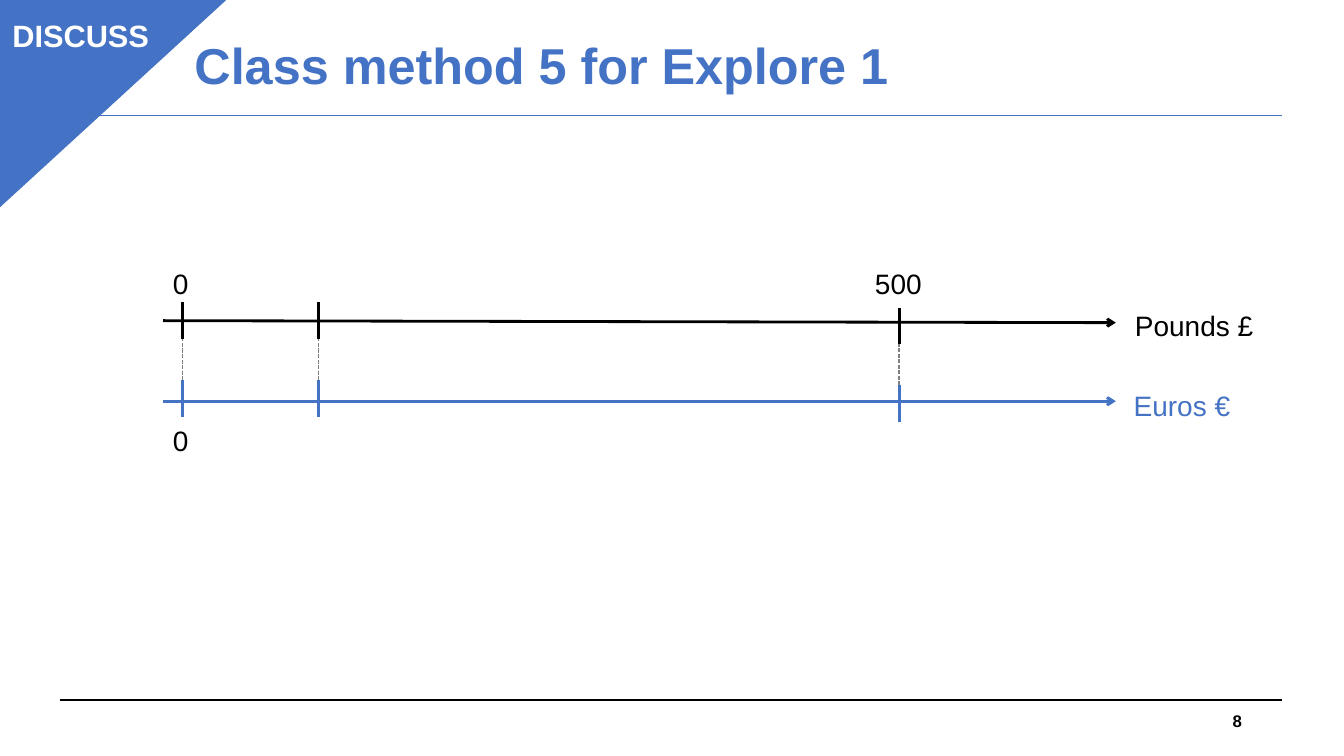
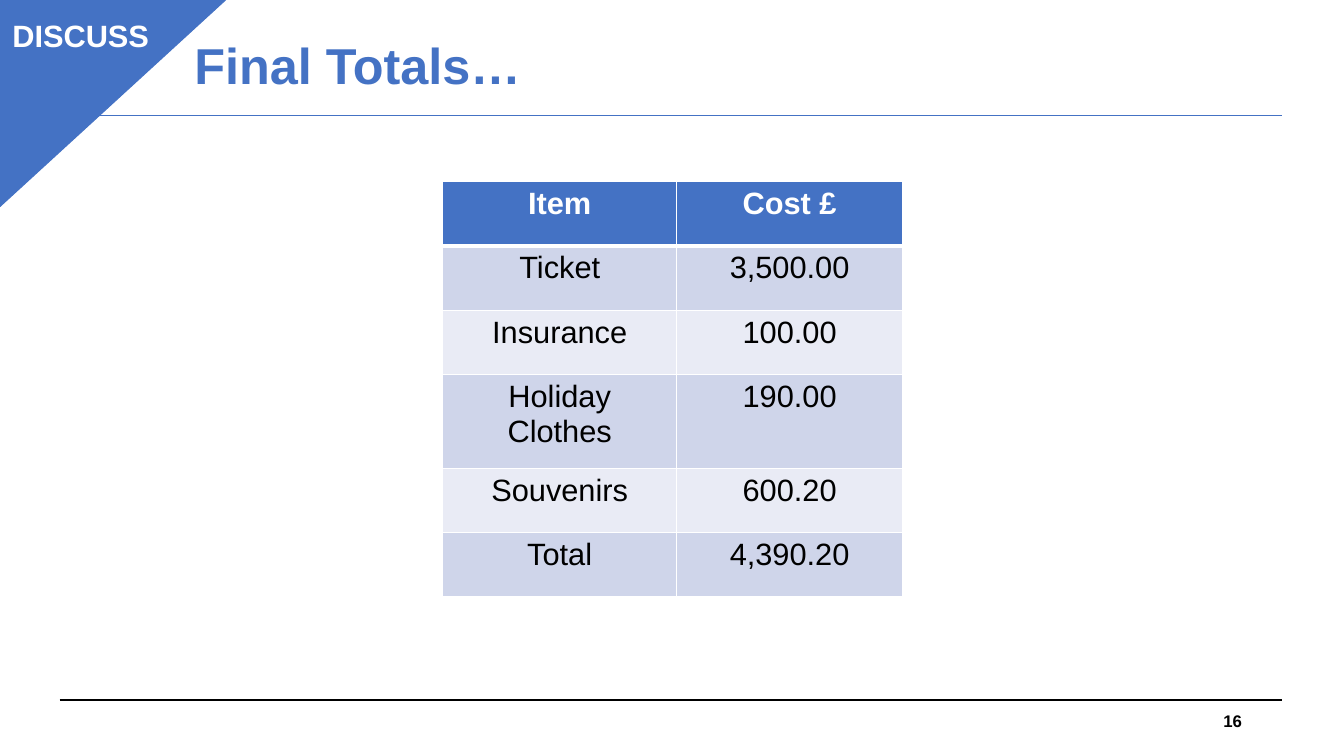
from lxml import etree
from pptx import Presentation
from pptx import util as u
from pptx.dml import color as c
from pptx.enum import dml, shapes, text
from pptx.oxml import ns

BLUE, BLACK, WHITE, GREY = "4472C4", "000000", "FFFFFF", "808080"
BANDS = ("CFD5EA", "E9EBF5")


def rgb(code):
    return c.RGBColor.from_string(code)


def write(frame, words, size=20, color=BLACK, bold=False, align="LEFT",
          anchor="TOP", wrap=True, spacing=None):
    frame.word_wrap = wrap
    frame.vertical_anchor = getattr(text.MSO_ANCHOR, anchor)
    para = frame.paragraphs[0]
    para.alignment = getattr(text.PP_ALIGN, align)
    para.line_spacing = spacing
    span = para.add_run()
    span.text = words
    span.font.name = "Arial"
    span.font.size = u.Pt(size)
    span.font.bold = bold
    span.font.color.rgb = rgb(color)


class Deck:
    left, right = 1.5, 32.31

    def __init__(self):
        self.deck = Presentation()
        self.deck.slide_width = u.Cm(33.87)
        self.deck.slide_height = u.Cm(19.05)
        self.page = None

    def add_page(self, title, number):
        self.page = self.deck.slides.add_slide(self.deck.slide_layouts[6])
        self.line(self.left, 17.63, self.right, 17.63, BLACK, 1.5)
        self.line(self.left, 2.9, self.right, 2.9, BLUE)
        self.label(title, 4.65, 0.3, 22.07, 2.82, size=36, color=BLUE,
                   bold=True, anchor="MIDDLE", spacing=0.9)
        self.label(str(number), 23.93, 17.65, 7.62, 1.02, size=12,
                   bold=True, align="RIGHT", anchor="MIDDLE")
        corner = self.shape("ISOSCELES_TRIANGLE", -0.08, -0.05, 5.82, 5.33)
        corner.adjustments[0] = 0
        corner._element.spPr.find(ns.qn("a:xfrm")).set("flipV", "1")
        tag = self.shape("RECTANGLE", 0.03, 0.3, 4.01, 1.19)
        write(tag.text_frame, "DISCUSS", size=22, color=WHITE, bold=True,
              align="CENTER")

    def shape(self, kind, left, top, width, height, color=BLUE):
        shape = self.page.shapes.add_shape(
            getattr(shapes.MSO_SHAPE, kind),
            u.Cm(left), u.Cm(top), u.Cm(width), u.Cm(height))
        shape.shadow.inherit = False
        shape.fill.solid()
        shape.fill.fore_color.rgb = rgb(color)
        shape.line.color.rgb = rgb(color)
        shape.line.width = u.Pt(0.75)
        return shape

    def label(self, words, left, top, width, height=1.12, **style):
        box = self.page.shapes.add_textbox(
            u.Cm(left), u.Cm(top), u.Cm(width), u.Cm(height))
        write(box.text_frame, words, **style)

    def line(self, x1, y1, x2, y2, color, weight=0.75, dashed=False, arrow=False):
        line = self.page.shapes.add_connector(
            shapes.MSO_CONNECTOR.STRAIGHT,
            u.Cm(x1), u.Cm(y1), u.Cm(x2), u.Cm(y2))
        line.line.color.rgb = rgb(color)
        line.line.width = u.Pt(weight)
        if dashed:
            line.line.dash_style = dml.MSO_LINE.SQUARE_DOT
        properties = line._element.spPr
        if arrow:
            outline = properties.find(ns.qn("a:ln"))
            etree.SubElement(outline, ns.qn("a:tailEnd"), type="arrow")
        etree.SubElement(properties, ns.qn("a:effectLst"))

    def border(self, cell, side, weight):
        edge = etree.SubElement(cell._tc.get_or_add_tcPr(), ns.qn(f"a:ln{side}"),
                                w=str(u.Pt(weight)))
        fill = etree.SubElement(edge, ns.qn("a:solidFill"))
        etree.SubElement(fill, ns.qn("a:srgbClr"), val=WHITE)

    def table(self, rows, left, top, widths, heights):
        table = self.page.shapes.add_table(
            len(rows), len(widths), u.Cm(left), u.Cm(top),
            u.Cm(sum(widths)), u.Cm(sum(heights))).table
        for column, width in zip(table.columns, widths):
            column.width = u.Cm(width)
        for index, (row, height) in enumerate(zip(rows, heights)):
            table.rows[index].height = u.Cm(height)
            header = index == 0
            for cell, words in zip(table.rows[index].cells, row):
                for side in "LRTB":
                    thick = (side, index) in (("B", 0), ("T", 1))
                    self.border(cell, side, 3 if thick else 1)
                cell.fill.solid()
                cell.fill.fore_color.rgb = rgb(BLUE if header else BANDS[(index - 1) % 2])
                write(cell.text_frame, words, size=22, bold=header,
                      color=WHITE if header else BLACK, align="CENTER")

    def number_lines(self):
        start, end, pounds, euros = 4.11, 28.12, 8.08, 10.11
        ticks = ((4.6, 0), (8.03, 0), (22.66, 0.13))
        for x, drop in ticks:
            self.line(x, pounds + drop, x, 10.06 + drop, GREY, 1, dashed=True)
        self.line(start, pounds, end, 8.13, BLACK, 2, arrow=True)
        self.line(start, euros, end, euros, BLUE, 2, arrow=True)
        for x, drop in ticks:
            for top, color in ((7.62, BLACK), (9.58, BLUE)):
                self.line(x, top + drop, x, top + drop + 0.92, color, 2)
        for words, left, top, width, color in (
                ("0", start, 6.58, 0.91, BLACK),
                ("0", start, 10.54, 0.91, BLACK),
                ("500", 21.8, 6.58, 1.7, BLACK),
                ("Pounds £", 28.35, 7.65, 3.53, BLACK),
                ("Euros €", 28.32, 9.66, 2.97, BLUE)):
            self.label(words, left, top, width, color=color, wrap=False)


def main():
    slides = Deck()
    slides.add_page("Class method 5 for Explore 1", 8)
    slides.number_lines()
    slides.add_page("Final Totals…", 16)
    slides.table(
        (("Item", "Cost £"), ("Ticket", "3,500.00"), ("Insurance", "100.00"),
         ("Holiday Clothes", "190.00"), ("Souvenirs", "600.20"),
         ("Total", "4,390.20")),
        11.16, 4.58, (5.89, 5.7), (1.62, 1.62, 1.62, 2.36, 1.62, 1.62))
    slides.deck.save("out.pptx")


if __name__ == "__main__":
    main()
